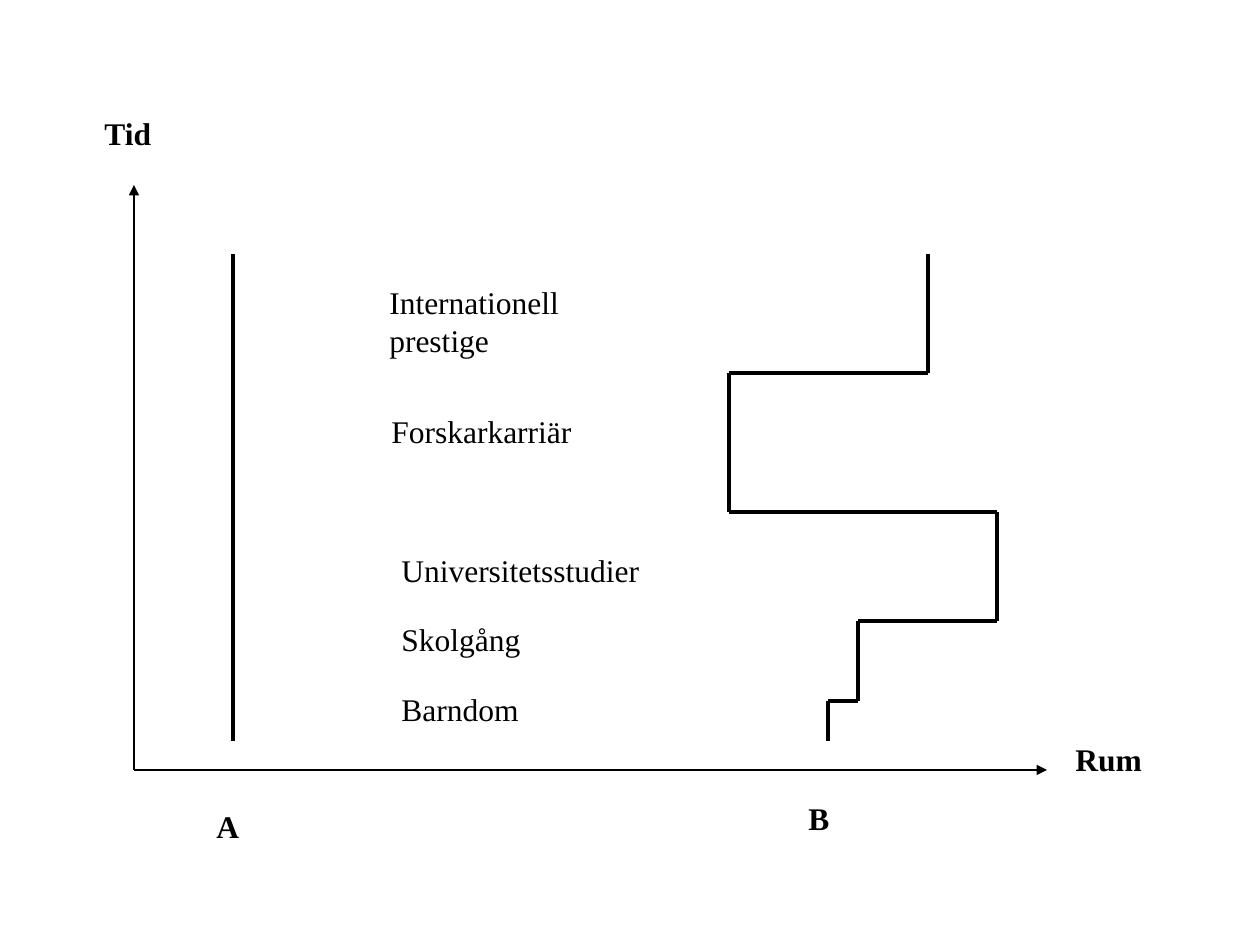
from itertools import pairwise

from lxml import etree
from pptx import Presentation
from pptx.dml.color import RGBColor
from pptx.enum.shapes import MSO_CONNECTOR
from pptx.enum.text import MSO_AUTO_SIZE
from pptx.oxml.ns import qn
from pptx.util import Emu, Pt

STRAIGHT = MSO_CONNECTOR.STRAIGHT
FIT_SHAPE = MSO_AUTO_SIZE.SHAPE_TO_FIT_TEXT
EMU_PER_PX = 914400 / 126
BLACK = "000000"
FONT = "Times New Roman"
LABEL_HEIGHT = 50
AXIS_WIDTH, PATH_WIDTH = 0.75, 2.25

ORIGIN = (134, 770)
TIME_END = (134, 185)
SPACE_END = (1047, 770)
PATH_A = [(233, 741), (233, 254)]
PATH_B = [(828, 741), (828, 701), (858, 701), (858, 621), (997, 621),
          (997, 512), (729, 512), (729, 373), (928, 373), (928, 254)]

# text, left, top, width
AXIS_LABELS = [
    ("Tid", 92, 108, 73),
    ("Rum", 1063, 734, 92),
    ("A", 204, 801, 48),
    ("B", 796, 793, 47),
]
LIFE_STAGES = [
    ("Internationell prestige", 377, 277, 302),
    ("Forskarkarriär", 379, 406, 205),
    ("Universitetsstudier", 389, 545, 263),
    ("Skolgång", 389, 614, 145),
    ("Barndom", 389, 684, 142),
]


def px(length):
    return Emu(round(length * EMU_PER_PX))


def color(value):
    return RGBColor.from_string(value)


def add_line(slide, start, end, width, arrow=False):
    connector = slide.shapes.add_connector(
        STRAIGHT, *(px(value) for value in (*start, *end)))
    connector.line.width = Pt(width)
    connector.line.color.rgb = color(BLACK)
    properties = connector._element.spPr
    etree.SubElement(properties, qn("a:effectLst"))
    if arrow:
        etree.SubElement(properties.find(qn("a:ln")), qn("a:tailEnd"), type="triangle")


def add_path(slide, points):
    """Join successive points with thick lines."""
    for start, end in pairwise(points):
        add_line(slide, start, end, PATH_WIDTH)


def add_label(slide, text, left, top, width, bold=False):
    shape = slide.shapes.add_textbox(px(left), px(top), px(width), px(LABEL_HEIGHT))
    frame = shape.text_frame
    frame.word_wrap = False
    frame.auto_size = FIT_SHAPE
    run = frame.paragraphs[0].add_run()
    run.text = text
    for name, value in {"name": FONT, "size": Pt(18), "bold": bold}.items():
        setattr(run.font, name, value)
    run.font.color.rgb = color(BLACK)


def main():
    presentation = Presentation()
    presentation.slide_width, presentation.slide_height = px(1260), px(945)
    slide = presentation.slides.add_slide(presentation.slide_layouts[6])
    for axis_end in (TIME_END, SPACE_END):
        add_line(slide, ORIGIN, axis_end, AXIS_WIDTH, arrow=True)
    for path in (PATH_A, PATH_B):
        add_path(slide, path)
    for label in AXIS_LABELS:
        add_label(slide, *label, bold=True)
    for label in LIFE_STAGES:
        add_label(slide, *label)
    presentation.save("out.pptx")


if __name__ == "__main__":
    main()
